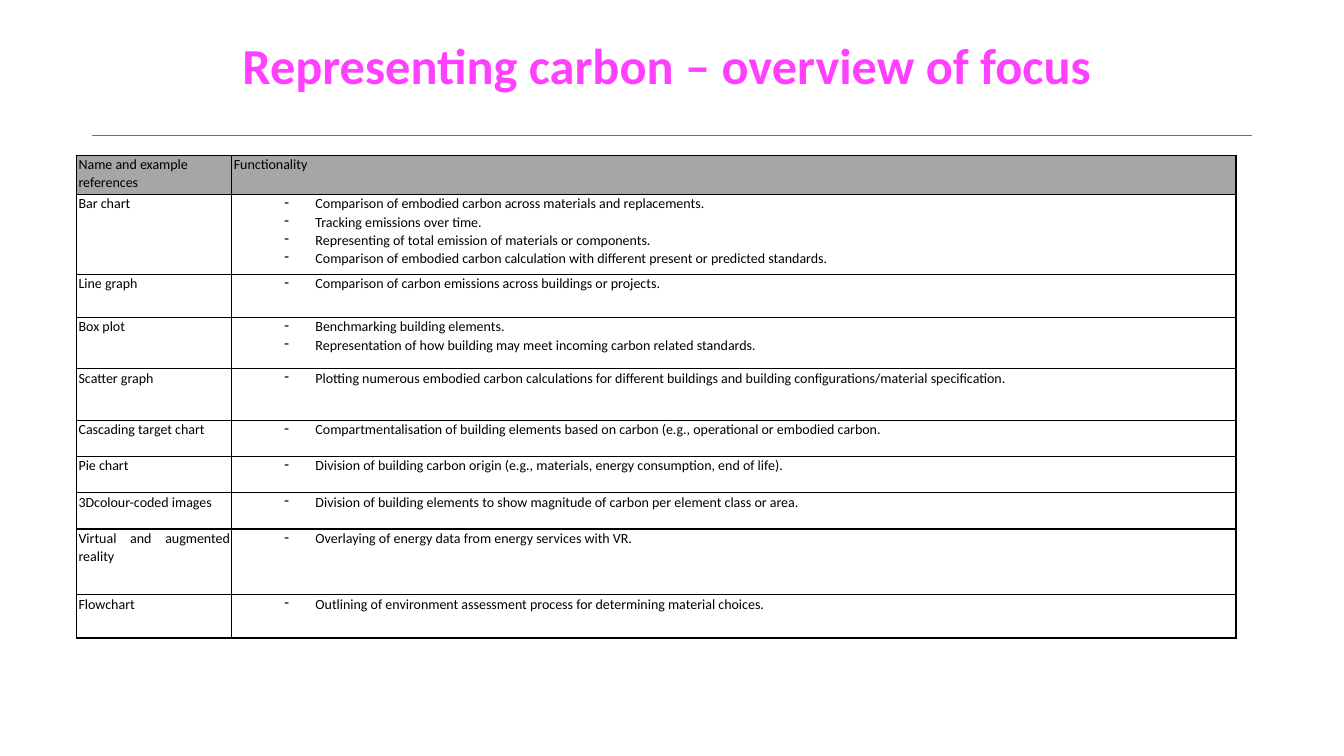
import pptx
import pptx.dml.color
import pptx.enum.shapes
import pptx.enum.text
import pptx.oxml
import pptx.oxml.ns
import pptx.util
import lxml.etree

Inches = pptx.util.Inches
Pt = pptx.util.Pt
ALIGN = pptx.enum.text.PP_ALIGN
FONT = "Calibri"

HEADINGS = ("Name and example references", "Functionality")
HEADING_HEIGHT = 0.39
REPRESENTATIONS = [
    ("Bar chart", 0.79, [
        "Comparison of embodied carbon across materials and replacements.",
        "Tracking emissions over time.",
        "Representing of total emission of materials or components.",
        "Comparison of embodied carbon calculation with different present or predicted standards."]),
    ("Line graph", 0.43, ["Comparison of carbon emissions across buildings or projects."]),
    ("Box plot", 0.51, [
        "Benchmarking building elements.",
        "Representation of how building may meet incoming carbon related standards."]),
    ("Scatter graph", 0.51, [
        "Plotting numerous embodied carbon calculations for different buildings and "
        "building configurations/material specification."]),
    ("Cascading target chart", 0.36, [
        "Compartmentalisation of building elements based on carbon (e.g., operational or embodied carbon."]),
    ("Pie chart", 0.36, [
        "Division of building carbon origin (e.g., materials, energy consumption, end of life)."]),
    ("3Dcolour-coded images", 0.36, [
        "Division of building elements to show magnitude of carbon per element class or area."]),
    ("Virtual and augmented reality", 0.65, ["Overlaying of energy data from energy services with VR."]),
    ("Flowchart", 0.43, [
        "Outlining of environment assessment process for determining material choices."]),
]


def rgb(hex_colour):
    """Return the colour for a hex string."""
    return pptx.dml.color.RGBColor.from_string(hex_colour)


def add_run(paragraph, text, size, colour, bold=False):
    """Append one formatted run to a paragraph."""
    run = paragraph.add_run()
    run.text = text
    run.font.name = FONT
    run.font.size = Pt(size)
    run.font.bold = bold
    run.font.color.rgb = rgb(colour)


def add_heading(slide, left, top, width, height):
    """Place the slide title in its placeholder."""
    heading = slide.shapes.title
    heading.left, heading.top = Inches(left), Inches(top)
    heading.width, heading.height = Inches(width), Inches(height)
    frame = heading.text_frame
    frame.word_wrap = True
    frame.vertical_anchor = pptx.enum.text.MSO_ANCHOR.MIDDLE
    paragraph = frame.paragraphs[0]
    paragraph.alignment = ALIGN.CENTER
    paragraph.line_spacing = 0.9
    add_run(paragraph, "Representing carbon – overview of focus ", 36, "FF40FF", True)


def add_rule(slide, left, top, width):
    """Draw the thin line under the title."""
    rule = slide.shapes.add_connector(
        pptx.enum.shapes.MSO_CONNECTOR.STRAIGHT,
        Inches(left), Inches(top), Inches(left + width), Inches(top))
    rule.line.color.rgb = rgb("4472C4")
    rule.line.width = Pt(0.5)
    lxml.etree.SubElement(rule._element.spPr, pptx.oxml.ns.qn("a:effectLst"))


def format_cell(cell, fill):
    """Give a cell its borders, margins and fill."""
    properties = cell._tc.get_or_add_tcPr()
    for side in ("L", "R", "T", "B"):
        properties.append(pptx.oxml.parse_xml(
            f'<a:ln{side} {pptx.oxml.ns.nsdecls("a")} w="{Pt(1)}"><a:solidFill>'
            f'<a:srgbClr val="000000"/></a:solidFill></a:ln{side}>'))
    cell.margin_left = cell.margin_right = Inches(0.02)
    cell.margin_top = cell.margin_bottom = 0
    cell.fill.solid()
    cell.fill.fore_color.rgb = rgb(fill)


def write_label(cell, label, alignment=ALIGN.JUSTIFY):
    """Write a plain one-paragraph cell."""
    paragraph = cell.text_frame.paragraphs[0]
    paragraph.alignment = alignment
    paragraph.line_spacing = 1.07
    paragraph.space_after = Pt(8)
    add_run(paragraph, label, 10, "000000")


def write_functions(cell, functions):
    """Write a dashed list in a cell."""
    frame = cell.text_frame
    for index, function in enumerate(functions):
        paragraph = frame.add_paragraph() if index else frame.paragraphs[0]
        paragraph.alignment = ALIGN.JUSTIFY
        paragraph.level = 1
        paragraph.line_spacing = 1.07
        properties = paragraph._p.get_or_add_pPr()
        properties.set("marL", str(Inches(0.81)))
        properties.set("indent", str(Inches(-0.31)))
        bullet = lxml.etree.SubElement(properties, pptx.oxml.ns.qn("a:buChar"))
        bullet.set("char", "-")
        add_run(paragraph, function, 10, "000000")


def add_overview(slide, left, top, width, name_width):
    """Build the table of representations and their functionality."""
    heights = [HEADING_HEIGHT] + [height for _, height, _ in REPRESENTATIONS]
    overview = slide.shapes.add_table(
        len(heights), 2, Inches(left), Inches(top), Inches(width), Inches(sum(heights))).table
    overview.first_row = overview.horz_banding = False
    overview.columns[0].width = Inches(name_width)
    overview.columns[1].width = Inches(width - name_width)
    for index, height in enumerate(heights):
        overview.rows[index].height = Inches(height)
        for cell in overview.rows[index].cells:
            format_cell(cell, "FFFFFF" if index else "A6A6A6")
    write_label(overview.cell(0, 0), HEADINGS[0], ALIGN.LEFT)
    write_label(overview.cell(0, 1), HEADINGS[1])
    for index, (name, _, functions) in enumerate(REPRESENTATIONS, 1):
        write_label(overview.cell(index, 0), name)
        write_functions(overview.cell(index, 1), functions)


def main():
    """Build and save the slide."""
    deck = pptx.Presentation()
    deck.slide_width, deck.slide_height = Inches(13.33), Inches(7.5)
    slide = deck.slides.add_slide(deck.slide_layouts[5])
    add_heading(slide, 0.34, 0.17, 12.66, 1.02)
    add_rule(slide, 0.91, 1.34, 11.51)
    add_overview(slide, 0.76, 1.54, 11.5, 1.54)
    deck.save("out.pptx")


if __name__ == "__main__":
    main()
